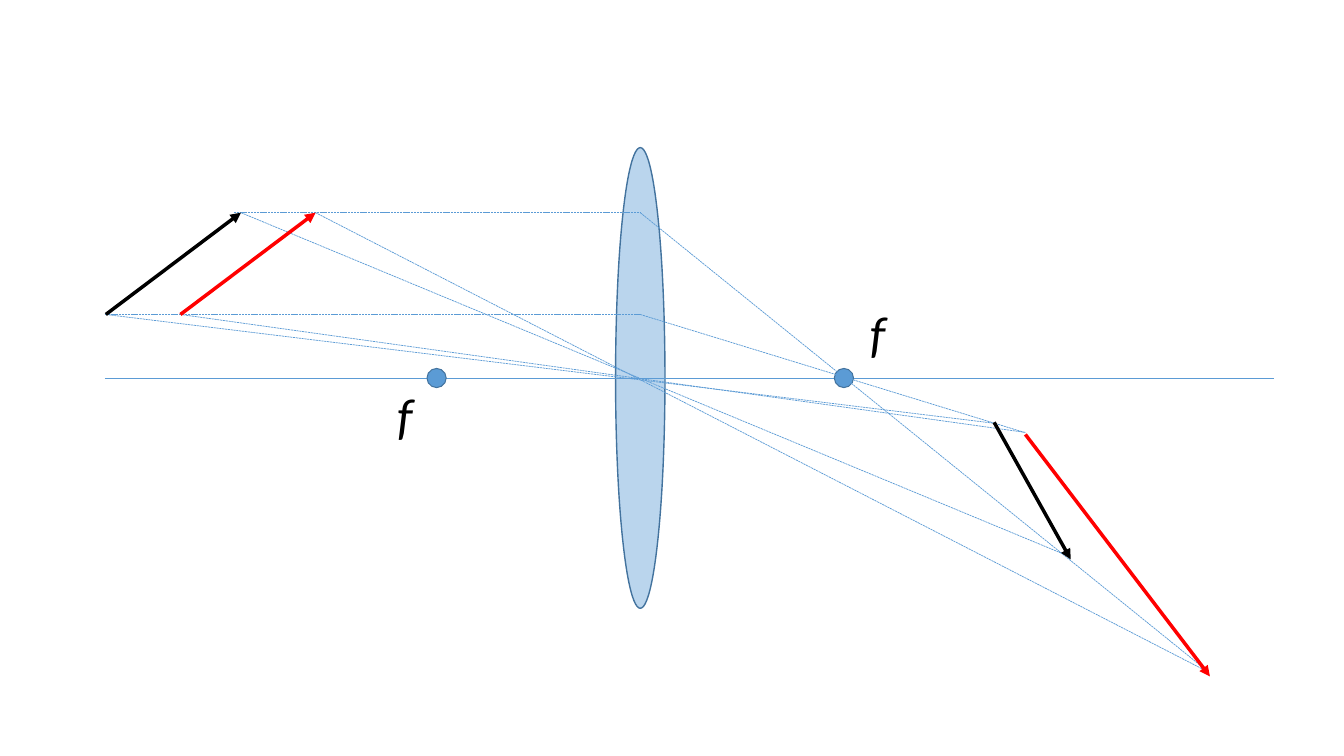
from lxml.etree import SubElement
from pptx import Presentation
from pptx.dml.color import RGBColor
from pptx.enum.dml import MSO_LINE
from pptx.enum.shapes import MSO_CONNECTOR, MSO_SHAPE
from pptx.enum.text import MSO_AUTO_SIZE
from pptx.oxml.ns import qn
from pptx.util import Inches, Pt

COLORS = {"blue": "5B9BD5", "outline": "43739E", "red": "FF0000", "black": "000000"}

# All points are in inches from the optical centre of the lens.
FOCAL_LENGTH = 2.02
LENS_SIZE = (0.49, 4.57)
FOCUS_SIZE = (0.19, 0.19)
AXIS_ENDS = (-5.31, 6.29)
TAIL_Y, TIP_Y = -0.63, -1.64
FOCUS_LABELS = [(-2.51, 0.01), (2.18, -0.8)]
PARALLEL_RAYS = [  # start, height, end of the refracted part
    (-4.03, TIP_Y, (5.64, 2.92)),
    (-5.31, TAIL_Y, (3.81, 0.54)),
]
ARROWS = [  # colour, object (tail, tip), its image, ends of the central rays
    ("red", [(-4.56, TAIL_Y), (-3.22, TIP_Y)],
     [(3.82, 0.56), (5.65, 2.96)], [(3.82, 0.54), (5.64, 2.92)]),
    ("black", [(-5.3, TAIL_Y), (-3.96, TIP_Y)],
     [(3.51, 0.44), (4.27, 1.8)], [(3.52, 0.45), (4.23, 1.76)]),
]


def rgb(name):
    return RGBColor.from_string(COLORS[name])


def add_line(slide, centre, start, end, color="blue", width=0.5, dashed=False, arrow=False):
    cx, cy = centre
    line = slide.shapes.add_connector(
        MSO_CONNECTOR.STRAIGHT,
        Inches(cx + start[0]), Inches(cy + start[1]),
        Inches(cx + end[0]), Inches(cy + end[1]))
    line.line.color.rgb = rgb(color)
    line.line.width = Pt(width)
    if dashed:
        line.line.dash_style = MSO_LINE.SQUARE_DOT
    if arrow:
        SubElement(line.line._get_or_add_ln(), qn("a:tailEnd"), type="triangle")
    SubElement(line._element.spPr, qn("a:effectLst"))


def add_ellipse(slide, centre, size, outline_width, opacity=100):
    """Draw a blue ellipse around its centre; opacity is in percent."""
    (cx, cy), (width, height) = centre, size
    ellipse = slide.shapes.add_shape(
        MSO_SHAPE.OVAL, Inches(cx - width / 2), Inches(cy - height / 2),
        Inches(width), Inches(height))
    ellipse.shadow.inherit = False
    ellipse.fill.solid()
    ellipse.fill.fore_color.rgb = rgb("blue")
    ellipse.line.color.rgb = rgb("outline")
    ellipse.line.width = Pt(outline_width)
    if opacity < 100:
        fill_color = ellipse._element.spPr.find(qn("a:solidFill"))[0]
        SubElement(fill_color, qn("a:alpha"), val=str(opacity * 1000))


def add_focus_label(slide, left, top):
    label = slide.shapes.add_textbox(Inches(left), Inches(top), Inches(0.36), Inches(0.71))
    frame = label.text_frame
    frame.word_wrap = False
    frame.auto_size = MSO_AUTO_SIZE.SHAPE_TO_FIT_TEXT
    paragraph = frame.paragraphs[0]
    paragraph.text = "f"
    font = paragraph.font
    font.name, font.size, font.italic = "Calibri", Pt(36), True
    font.color.rgb = rgb("black")


def add_lens(slide, centre):
    """Draw the lens, the optical axis and both foci with their labels."""
    cx, cy = centre
    add_ellipse(slide, centre, LENS_SIZE, 1, opacity=42)
    add_line(slide, centre, (AXIS_ENDS[0], 0), (AXIS_ENDS[1], 0))
    for x in (-FOCAL_LENGTH, FOCAL_LENGTH):
        add_ellipse(slide, (cx + x, cy), FOCUS_SIZE, 0)
    for x, y in FOCUS_LABELS:
        add_focus_label(slide, cx + x, cy + y)


def add_rays(slide, centre):
    for start_x, height, end in PARALLEL_RAYS:
        bend = (0, height)
        add_line(slide, centre, (start_x, height), bend, dashed=True)
        add_line(slide, centre, bend, end, dashed=True)
    for _, source, _, ray_ends in ARROWS:
        for start, end in zip(source, ray_ends):
            add_line(slide, centre, start, end, dashed=True)


def add_objects_and_images(slide, centre):
    for color, source, image, _ in ARROWS:
        for tail, tip in (source, image):
            add_line(slide, centre, tail, tip, color, 2.5, arrow=True)


def main():
    presentation = Presentation()
    presentation.slide_width = Inches(13.33)
    presentation.slide_height = Inches(7.5)
    slide = presentation.slides.add_slide(presentation.slide_layouts[6])
    optical_centre = (6.35, 3.75)
    add_lens(slide, optical_centre)
    add_rays(slide, optical_centre)
    add_objects_and_images(slide, optical_centre)
    presentation.save("out.pptx")


if __name__ == "__main__":
    main()
